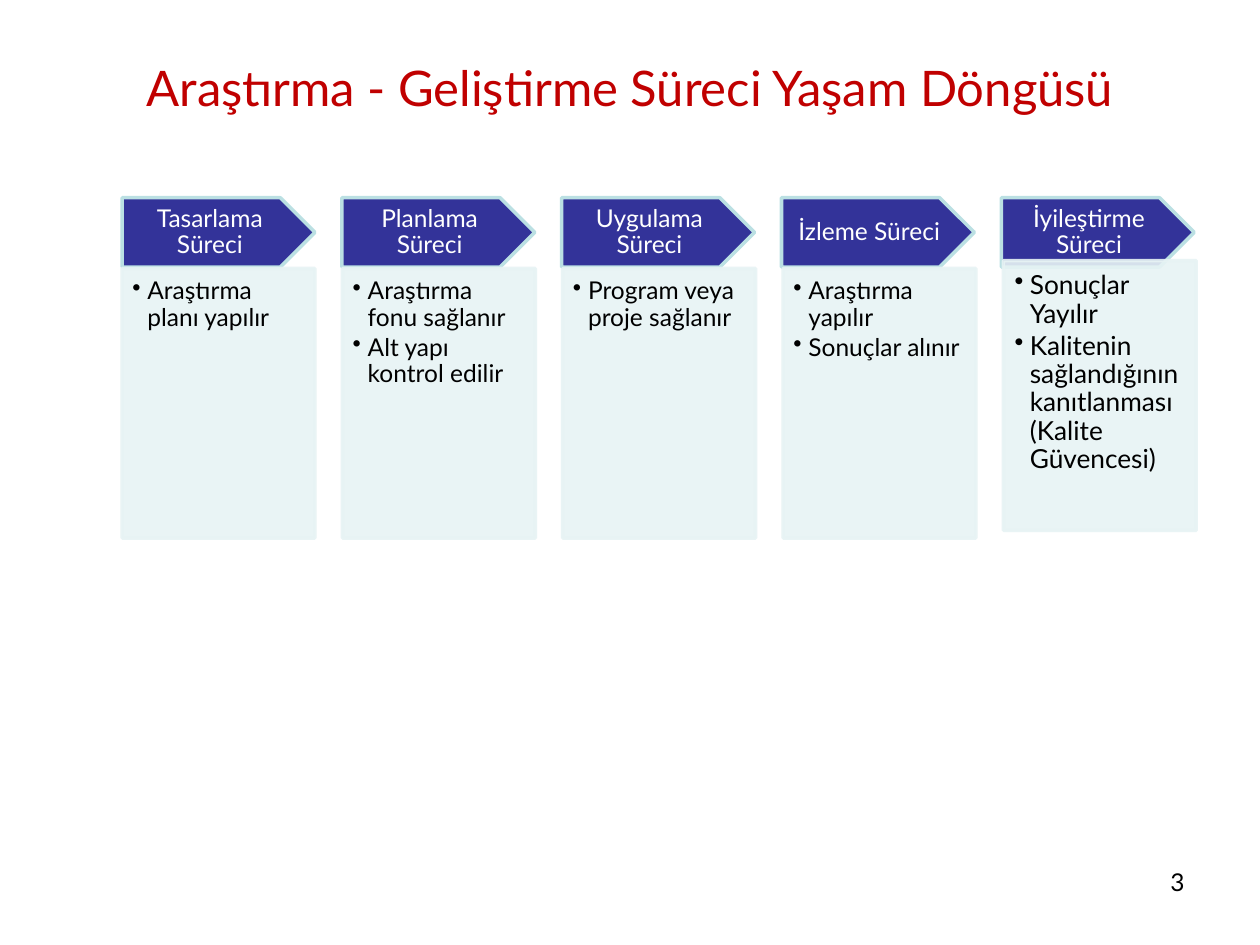
from dataclasses import dataclass

from lxml import etree
from pptx import Presentation
from pptx import util as u
from pptx.dml import color
from pptx.enum import shapes, text
from pptx.oxml import ns

Pt = u.Pt


@dataclass
class Theme:
    font: str = "Lato"
    title: str = "C00000"
    header: str = "333399"
    border: str = "BBE0E3"
    panel: str = "E7F3F4"
    dark: str = "000000"
    light: str = "FFFFFF"
    title_size: int = 28
    body_size: int = 14
    large_size: int = 15
    panel_alpha: int = 90


theme = Theme()


def write(sp, lines, size=theme.body_size, rgb=theme.dark, align=text.PP_ALIGN.LEFT,
          anchor=text.MSO_ANCHOR.TOP, insets=(7.2, 3.6, 7.2, 3.6),
          spacing=1.0, after=0, bullet=None, indent=8.64):
    """Fill a shape with one paragraph per line."""
    tf = sp.text_frame
    tf.word_wrap = True
    tf.auto_size = text.MSO_AUTO_SIZE.NONE
    tf.vertical_anchor = anchor
    tf.margin_left, tf.margin_top, tf.margin_right, tf.margin_bottom = map(Pt, insets)
    for i, line in enumerate(lines):
        p = tf.paragraphs[0] if i == 0 else tf.add_paragraph()
        p.alignment, p.line_spacing, p.space_after = align, spacing, Pt(after)
        if bullet:
            pPr = p._p.get_or_add_pPr()
            pPr.set("marL", str(Pt(indent)))
            pPr.set("indent", str(-Pt(indent)))
            etree.SubElement(pPr, ns.qn("a:buChar")).set("char", bullet)
        r = p.add_run()
        r.text = line
        r.font.name, r.font.size = theme.font, Pt(size)
        r.font.color.rgb = color.RGBColor.from_string(rgb)


def add_box(s, kind, left, top, width, height, fill, line, alpha=100):
    """Add a filled, outlined shape, with alpha in percent."""
    sp = s.shapes.add_shape(kind, Pt(left), Pt(top), Pt(width), Pt(height))
    sp.shadow.inherit = False
    sp.line.width = Pt(2)
    for paint, rgb in ((sp.fill, fill), (sp.line.fill, line)):
        paint.solid()
        paint.fore_color.rgb = color.RGBColor.from_string(rgb)
    if alpha < 100:
        for clr in sp._element.spPr.iter(ns.qn("a:srgbClr")):
            etree.SubElement(clr, ns.qn("a:alpha")).set("val", str(alpha * 1000))
    return sp


prs = Presentation()
prs.slide_width, prs.slide_height = Pt(720), Pt(540)
s = prs.slides.add_slide(prs.slide_layouts[5])

# Title
title = s.shapes.title
title.left, title.top, title.width, title.height = Pt(36), Pt(20.9), Pt(648), Pt(90)
write(title, ["Araştırma - Geliştirme Süreci Yaşam Döngüsü"], size=theme.title_size,
      rgb=theme.title, align=text.PP_ALIGN.CENTER, insets=(7.2, 12, 7.2, 3.6))

# Stages: header, panel top, text size, panel inset growth, bullet points
stages = [
    ("Tasarlama Süreci", 153.4, theme.body_size, 0, ["Araştırma planı yapılır"]),
    ("Planlama Süreci", 153.4, theme.body_size, 0,
     ["Araştırma fonu sağlanır", "Alt yapı kontrol edilir"]),
    ("Uygulama Süreci", 153.4, theme.body_size, 0, ["Program veya proje sağlanır"]),
    ("İzleme Süreci", 153.4, theme.body_size, 0, ["Araştırma yapılır", "Sonuçlar alınır"]),
    ("İyileştirme Süreci", 149, theme.large_size, 0.7,
     ["Sonuçlar Yayılır", "Kalitenin sağlandığının kanıtlanması (Kalite Güvencesi)"]),
]
left, pitch, width = 69.8, 125.9, 110.2
header_top, header_height, panel_height = 113, 39.6, 154.1

for i, (name, panel_top, size, grow, points) in enumerate(stages):
    x = left + i * pitch
    header = add_box(s, shapes.MSO_SHAPE.PENTAGON, x - 0.3 * i, header_top, width,
                     header_height, theme.header, theme.border)
    write(header, [name], rgb=theme.light, align=text.PP_ALIGN.CENTER,
          anchor=text.MSO_ANCHOR.MIDDLE, insets=(7.9, 4.3, 7.9, 4.3), spacing=0.9)
    panel = add_box(s, shapes.MSO_SHAPE.RECTANGLE, x, panel_top, width, panel_height,
                    theme.panel, theme.panel, alpha=theme.panel_alpha)
    write(panel, points, size=size, insets=[m + grow for m in (5.8, 5.8, 7.9, 8.6)],
          spacing=0.9, after=2.1, bullet="•")

# Page number
number = s.shapes.add_textbox(Pt(516), Pt(491.8), Pt(168), Pt(37.4))
write(number, ["3"], align=text.PP_ALIGN.RIGHT)

prs.save("out.pptx")
